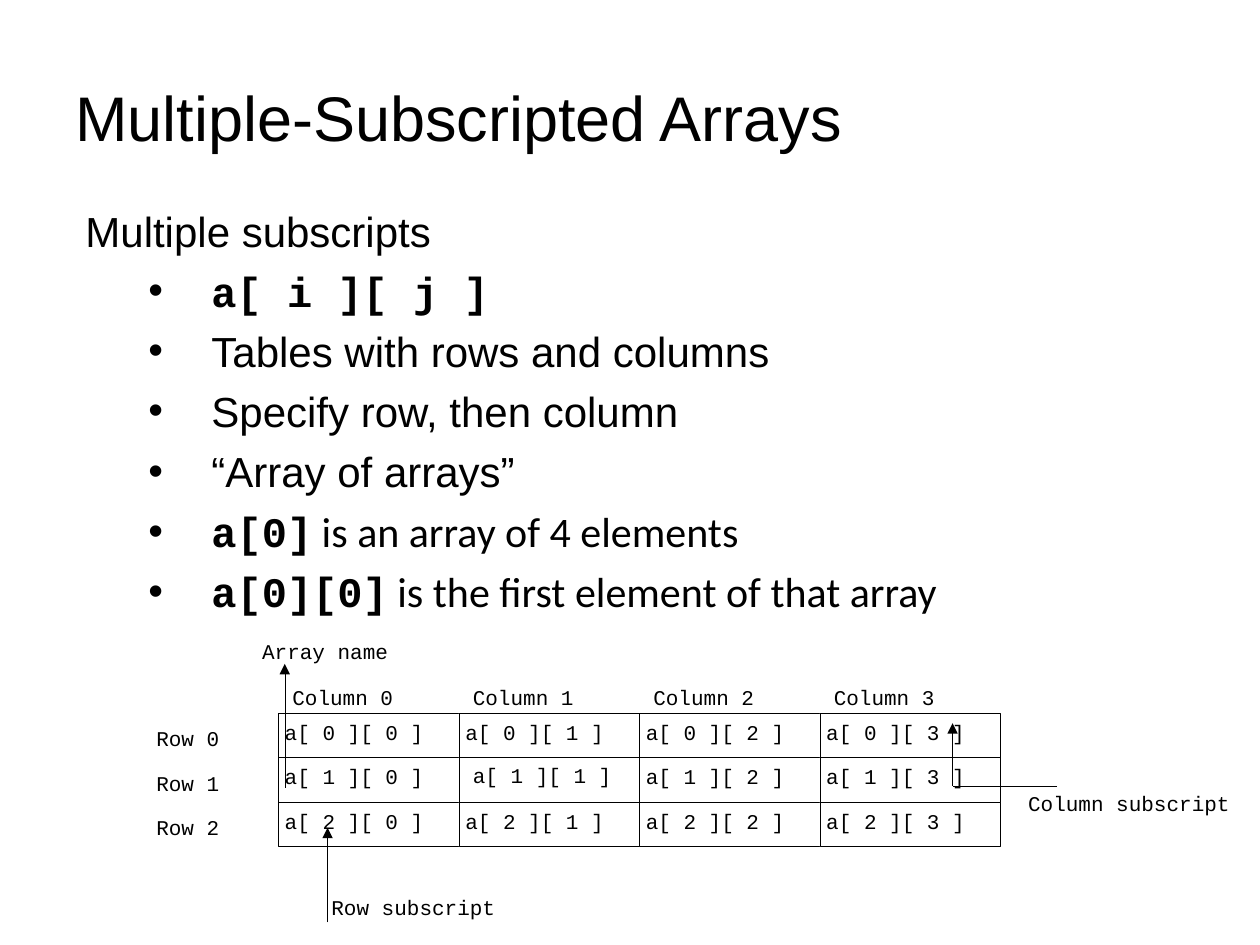
from dataclasses import dataclass

import lxml.etree
import pptx
import pptx.dml.color
import pptx.enum.shapes
import pptx.enum.text
import pptx.oxml
import pptx.oxml.ns
import pptx.util

Inches = pptx.util.Inches
Pt = pptx.util.Pt
qn = pptx.oxml.ns.qn

COLORS = {"ink": "000000", "cell": "FFFFFF"}
TITLE = {"name": "Arial", "size": Pt(36)}
PROSE = {"name": "Arial", "size": Pt(24), "bold": False}
CALIBRI = {"name": "Calibri", "size": Pt(24), "bold": False}
CODE = {"name": "Courier New", "size": Pt(24), "bold": True}
SMALL_CODE = {"name": "Courier New", "size": Pt(12)}

# Array grid, in inches
ROWS, COLUMNS = 3, 4
GRID_LEFT, GRID_TOP = 2.21, 5.66
CELL_WIDTH, CELL_HEIGHT = 5.73 / COLUMNS, 1.06 / ROWS


@dataclass
class Label:
    text: str
    left: float
    top: float
    width: float
    height: float = 0.24


@dataclass
class Pointer:
    start: tuple[float, float]
    end: tuple[float, float]
    arrow: bool = True


@dataclass
class Point:
    runs: list[tuple[str, dict]]
    level: int = 1


def rgb(name: str) -> pptx.dml.color.RGBColor:
    return pptx.dml.color.RGBColor.from_string(COLORS[name])


def add_run(paragraph, text: str, font_format: dict) -> None:
    run = paragraph.add_run()
    run.text = text
    for attribute, value in font_format.items():
        setattr(run.font, attribute, value)
    run.font.color.rgb = rgb("ink")


def add_frame(slide, left: float, top: float, width: float, height: float):
    box = slide.shapes.add_textbox(Inches(left), Inches(top), Inches(width), Inches(height))
    box.text_frame.word_wrap = True
    return box.text_frame


def draw_label(slide, label: Label) -> None:
    frame = add_frame(slide, label.left, label.top, label.width, label.height)
    for side in ("left", "top", "right", "bottom"):
        setattr(frame, f"margin_{side}", 0)
    add_run(frame.paragraphs[0], label.text, SMALL_CODE)


def draw_cell(slide, row: int, column: int) -> None:
    cell = slide.shapes.add_shape(
        pptx.enum.shapes.MSO_SHAPE.RECTANGLE,
        Inches(GRID_LEFT + column * CELL_WIDTH), Inches(GRID_TOP + row * CELL_HEIGHT),
        Inches(CELL_WIDTH), Inches(CELL_HEIGHT))
    cell.shadow.inherit = False
    cell.fill.solid()
    cell.fill.fore_color.rgb = rgb("cell")
    cell.line.color.rgb = rgb("ink")
    cell.line.width = Pt(0.25)


def draw_pointer(slide, pointer: Pointer) -> None:
    line = slide.shapes.add_connector(
        pptx.enum.shapes.MSO_CONNECTOR.STRAIGHT,
        *(Inches(value) for value in pointer.start + pointer.end))
    line.line.color.rgb = rgb("ink")
    line.line.width = Pt(0.25)
    properties = line._element.spPr
    if pointer.arrow:
        lxml.etree.SubElement(properties.find(qn("a:ln")), qn("a:tailEnd"), type="triangle")
    lxml.etree.SubElement(properties, qn("a:effectLst"))


def add_point(frame, point: Point) -> None:
    paragraph = frame.add_paragraph()
    paragraph.level = point.level
    paragraph.space_before = Pt(5.5)
    properties = paragraph._p.get_or_add_pPr()
    properties.set("marL", str(Inches(1)))
    properties.set("indent", str(Inches(-0.5)))
    lxml.etree.SubElement(properties, qn("a:buFont"), typeface="Arial")
    lxml.etree.SubElement(properties, qn("a:buChar"), char="•")
    for text, font_format in point.runs:
        add_run(paragraph, text, font_format)


POINTS = [
    Point([("a[ i ][ j ]", CODE)]),
    Point([("Tables with rows and columns", PROSE)]),
    Point([("Specify row, then column", PROSE)]),
    Point([("“Array of arrays”", PROSE)]),
    Point([("a[0]", CODE), (" is an array of 4 elements", CALIBRI)], level=2),
    Point([("a[0][0]", CODE), (" is the first element of that array", CALIBRI)], level=2),
]

CAPTIONS = [
    Label("Row subscript", 2.63, 7.1, 1.92, 0.2),
    Label("Array name", 2.08, 5.07, 1.49, 0.19),
    Label("Column subscript", 8.16, 6.27, 1.83, 0.19),
]

POINTERS = [
    Pointer((2.6, 7.32), (2.6, 6.57)),
    Pointer((2.26, 6.25), (2.26, 5.27)),
    Pointer((7.56, 6.24), (7.56, 5.74)),
    Pointer((8.39, 6.24), (7.56, 6.24), arrow=False),
]

# The element label that sits slightly off its grid place
NUDGES = {(1, 1): (0.06, -0.01)}


def main() -> None:
    deck = pptx.Presentation()
    deck.slide_width, deck.slide_height = Inches(10), Inches(7.5)
    slide = deck.slides.add_slide(deck.slide_layouts[6])

    # Title
    title = add_frame(slide, 0.5, 0.3, 9, 1.25)
    title.vertical_anchor = pptx.enum.text.MSO_ANCHOR.MIDDLE
    add_run(title.paragraphs[0], "Multiple-Subscripted Arrays", TITLE)

    # Body points
    body = add_frame(slide, 0.58, 1.58, 9, 5.67)
    add_run(body.paragraphs[0], "Multiple subscripts", PROSE)
    for point in POINTS:
        add_point(body, point)

    # Row and column headings
    for row in range(ROWS):
        draw_label(slide, Label(f"Row {row}", 1.24, GRID_TOP + 0.1 + row * CELL_HEIGHT, 0.78))
    for column in range(COLUMNS):
        draw_label(slide, Label(f"Column {column}", GRID_LEFT + 0.11 + column * CELL_WIDTH,
                                GRID_TOP - 0.23, 1.21))

    # Array elements
    for column in range(COLUMNS):
        for row in range(ROWS):
            draw_cell(slide, row, column)
            right, down = NUDGES.get((row, column), (0, 0))
            draw_label(slide, Label(f"a[ {row} ][ {column} ]",
                                    GRID_LEFT + 0.05 + column * CELL_WIDTH + right,
                                    GRID_TOP + 0.05 + row * CELL_HEIGHT + down, 1.32, 0.28))

    # Captions and their pointers
    for caption in CAPTIONS:
        draw_label(slide, caption)
    for pointer in POINTERS:
        draw_pointer(slide, pointer)

    deck.save("out.pptx")


if __name__ == "__main__":
    main()
